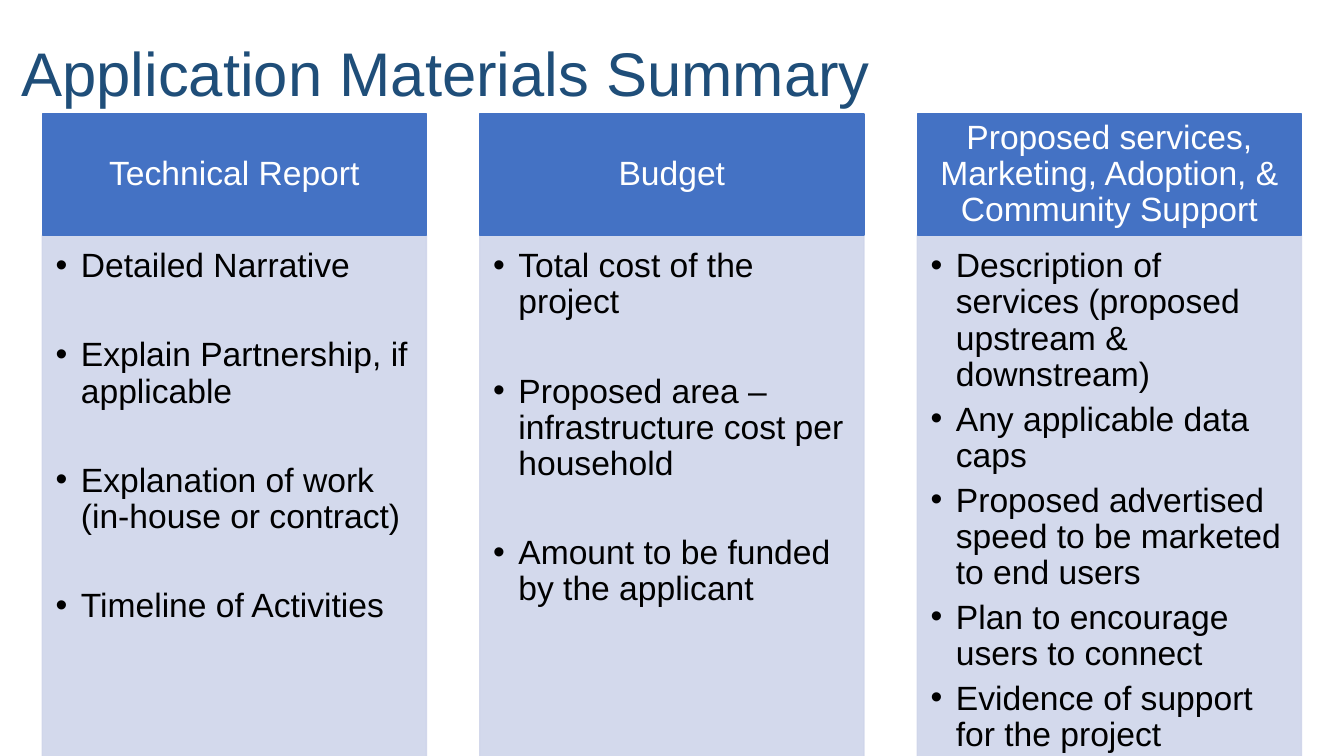
from dataclasses import dataclass

from lxml import etree
from pptx import Presentation
from pptx.dml.color import RGBColor
from pptx.enum import shapes, text
from pptx.oxml import ns
from pptx.util import Pt

COLORS = {
    "title": "1F4E79",
    "header": "4472C4",
    "panel": "CFD5EA",
    "light": "FFFFFF",
    "dark": "000000",
}
FONT = "Arial"
COLUMN_LEFT, COLUMN_STEP, COLUMN_WIDTH = 30.2, 312.5, 274.4
HEADER_TOP, HEADER_HEIGHT, PANEL_HEIGHT = 81.5, 86.4, 389
INDENT = 18


@dataclass
class Column:
    heading: str
    items: list[str]
    placeholder: int
    gap: float


COLUMNS = [
    Column(
        "Technical Report",
        [
            "Detailed Narrative",
            "Explain Partnership, if applicable",
            "Explanation of work (in-house or contract)",
            "Timeline of Activities",
        ],
        1,
        37.8,
    ),
    Column(
        "Budget",
        [
            "Total cost of the project",
            "Proposed area – infrastructure cost per household",
            "Amount to be funded by the applicant",
        ],
        2,
        37.8,
    ),
    Column(
        "Proposed services, Marketing, Adoption, & Community Support",
        [
            "Description of services (proposed upstream & downstream)",
            "Any applicable data caps",
            "Proposed advertised speed to be marketed to end users",
            "Plan to encourage users to connect",
            "Evidence of support for the project",
        ],
        4,
        6,
    ),
]


def place(shape, left: float, top: float, width: float, height: float) -> None:
    shape.left, shape.top = Pt(left), Pt(top)
    shape.width, shape.height = Pt(width), Pt(height)


def paint(shape, color: str, opacity: int = 100) -> None:
    shape.fill.solid()
    shape.line.fill.solid()
    shape.line.width = Pt(1)
    for fill in (shape.fill, shape.line.fill):
        fill.fore_color.rgb = RGBColor.from_string(COLORS[color])
    if opacity < 100:
        for color_element in shape.element.spPr.iter(ns.qn("a:srgbClr")):
            alpha = etree.SubElement(color_element, ns.qn("a:alpha"))
            alpha.set("val", str(opacity * 1000))


def add_bullet(paragraph) -> None:
    properties = paragraph._p.get_or_add_pPr()
    properties.set("marL", str(Pt(INDENT)))
    properties.set("indent", str(-Pt(INDENT)))
    etree.SubElement(properties, ns.qn("a:buFont")).set("typeface", FONT)
    etree.SubElement(properties, ns.qn("a:buChar")).set("char", "•")


def write(shape, lines: list[str], *, size: float, color: str,
          margins: tuple[float, float, float, float], anchor=text.MSO_ANCHOR.TOP,
          align=text.PP_ALIGN.LEFT, spacing: float = 0.9, gap: float = 0,
          bullets: bool = False) -> None:
    frame = shape.text_frame
    frame.word_wrap = True
    frame.auto_size = text.MSO_AUTO_SIZE.NONE
    frame.vertical_anchor = anchor
    (frame.margin_left, frame.margin_top,
     frame.margin_right, frame.margin_bottom) = map(Pt, margins)
    for index, line in enumerate(lines):
        paragraph = frame.add_paragraph() if index else frame.paragraphs[0]
        paragraph.text = line
        if bullets:
            add_bullet(paragraph)
        paragraph.alignment = align
        paragraph.line_spacing = spacing
        paragraph.space_before = Pt(0)
        paragraph.space_after = Pt(gap)
        font = paragraph.font
        font.name, font.size, font.bold = FONT, Pt(size), False
        font.color.rgb = RGBColor.from_string(COLORS[color])


def add_column(slide, column: Column, left: float) -> None:
    header = slide.shapes.add_shape(shapes.MSO_SHAPE.RECTANGLE, 0, 0, 0, 0)
    header.shadow.inherit = False
    place(header, left, HEADER_TOP, COLUMN_WIDTH, HEADER_HEIGHT)
    paint(header, "header")
    write(header, [column.heading], size=24, color="light",
          margins=(12.8, 7.3, 12.8, 7.3), anchor=text.MSO_ANCHOR.MIDDLE,
          align=text.PP_ALIGN.CENTER)

    panel = slide.placeholders[column.placeholder]
    place(panel, left, HEADER_TOP + HEADER_HEIGHT, COLUMN_WIDTH, PANEL_HEIGHT)
    paint(panel, "panel", opacity=90)
    write(panel, column.items, size=24, color="dark",
          margins=(9.6, 9.6, 12.8, 14.4), gap=column.gap, bullets=True)


def main() -> None:
    presentation = Presentation()
    presentation.slide_width, presentation.slide_height = Pt(960), Pt(540)
    slide = presentation.slides.add_slide(presentation.slide_layouts[4])

    unused = slide.placeholders[3].element
    unused.getparent().remove(unused)

    title = slide.shapes.title
    place(title, 8, 21.6, 935, 60.5)
    write(title, ["Application Materials Summary"], size=44, color="title",
          margins=(7.2, 3.6, 7.2, 3.6), spacing=1)

    for index, column in enumerate(COLUMNS):
        add_column(slide, column, COLUMN_LEFT + index * COLUMN_STEP)

    presentation.save("out.pptx")


if __name__ == "__main__":
    main()
